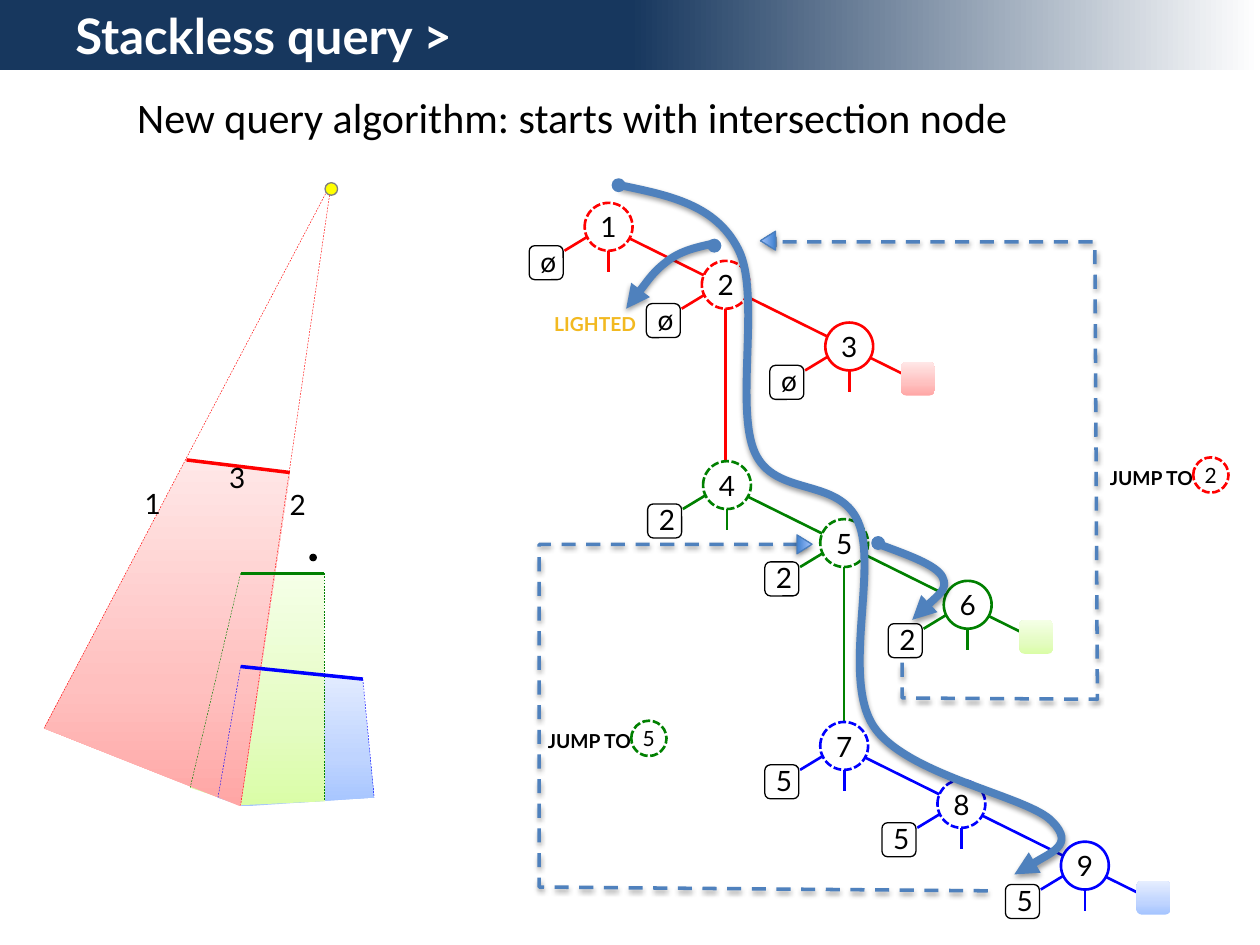
import pptx
import pptx.dml.color
import pptx.enum.dml
import pptx.enum.shapes
import pptx.enum.text
import pptx.oxml.ns
import pptx.util
from lxml import etree
from pptx.util import Inches

qn = pptx.oxml.ns.qn
SHAPE = pptx.enum.shapes.MSO_SHAPE
DASH = pptx.enum.dml.MSO_LINE

THEME = {
    "font": "Lato", "body_font": "Calibri",
    "title": 28, "body": 24, "label": 16, "small": 12, "note": 11,
    "black": "000000", "white": "FFFFFF", "grey": "808080", "yellow": "FFFF00",
    "gold": "F2B921", "red": "FF0000", "green": "008000", "blue": "0000FF",
    "flow": "4F81BD", "arrow_edge": "4B7EBC",
    "red_fade": [(0, "FFA6A5"), (35, "FFC0BF"), (100, "FFE7E7")],
    "green_fade": [(0, "DAFDA7"), (35, "E4FCC2"), (100, "F5FFE7")],
    "blue_fade": [(0, "A4C4FF"), (35, "BFD4FF"), (100, "E6EEFF")],
    "arrow_fade": [(0, "3F80CE"), (100, "A4C4FF")],
    "title_fade": [(50, "17375E"), (100, "FFFFFF")],
}

TITLE = "\tStackless query >"
SUBTITLE = "New query algorithm: starts with intersection node"
VOLUMES = [
    ("blue", [(1.91, 5.28), (1.73, 6.33), (1.93, 6.4), (2.97, 6.33), (2.87, 5.38)]),
    ("green", [(1.91, 4.55), (1.51, 6.25), (1.92, 6.39), (2.58, 6.36), (2.57, 4.55)]),
    ("red", [(0.35, 5.78), (1.48, 3.65), (2.3, 3.76), (1.91, 6.4)]),
]
RAYS = [
    ("green", (2.57, 4.55), (2.57, 6.36)), ("red", (2.63, 1.45), (1.91, 6.39)),
    ("red", (2.63, 1.45), (0.35, 5.78)), ("blue", (1.91, 5.29), (1.73, 6.33)),
    ("blue", (2.88, 5.39), (2.97, 6.33)), ("green", (1.91, 4.55), (1.51, 6.25)),
]
EDGES = [
    ("red", (1.48, 3.65), (2.3, 3.75)), ("blue", (1.91, 5.29), (2.88, 5.39)),
    ("green", (1.91, 4.55), (2.57, 4.55)),
]
EDGE_LABELS = [("1", 1.05, 3.81), ("2", 2.2, 3.82), ("3", 1.72, 3.61)]
SUBTREES = [
    ("red", (4.83, 1.8), "123", "ø", 3.66),
    ("green", (5.77, 3.85), "456", "2", 5.73),
    ("blue", (6.7, 5.92), "789", "5", None),
]
NODE_STEPS = [(0, 0), (0.93, 0.46), (1.91, 0.95)]
CURVES = [
    [(4.92, 1.47), (5.3, 1.55), (5.68, 1.62), (5.86, 1.98), (6.04, 2.33), (5.83, 3.23),
     (5.99, 3.59), (6.15, 3.95), (6.65, 3.78), (6.81, 4.14), (6.97, 4.5), (6.68, 5.37),
     (6.93, 5.76), (7.19, 6.16), (8.17, 6.32), (8.35, 6.52), (8.54, 6.71), (8.05, 6.94),
     (8.05, 6.94)],
    [(6.95, 4.31), (7.19, 4.4), (7.43, 4.48), (7.48, 4.58), (7.53, 4.68), (7.24, 4.92),
     (7.24, 4.92)],
    [(5.67, 1.93), (5.55, 1.96), (5.42, 1.98), (5.3, 2.07), (5.18, 2.16), (4.97, 2.45),
     (4.97, 2.45)],
]
CURVE_STARTS = [(6.97, 4.31), (4.91, 1.47), (5.67, 1.95)]
JUMPS = [("green", "5", 4.25, 5.74), ("red", "2", 8.71, 3.65)]
DETOURS = [
    ([(7.16, 5.26), (7.16, 5.54), (8.71, 5.55), (8.69, 1.92), (6.08, 1.92)], (6.02, 1.85), 270),
    ([(7.84, 7.07), (4.28, 7.04), (4.28, 4.32), (6.42, 4.32)], (6.31, 4.26), 90),
]


def rgb(name):
    return pptx.dml.color.RGBColor.from_string(THEME[name])


def write_text(box, text, *, size="label", color="black", font="font", bold=False,
               align=None, tab=None):
    para = box.text_frame.paragraphs[0]
    if tab:
        stops = etree.SubElement(para._p.get_or_add_pPr(), qn("a:tabLst"))
        etree.SubElement(stops, qn("a:tab"), pos=str(Inches(tab)), algn="l")
    para.alignment = align
    span = para.add_run()
    span.text = text
    span.font.size = pptx.util.Pt(THEME[size])
    span.font.name = THEME[font]
    span.font.bold = bold
    span.font.color.rgb = rgb(color)


def add_text(page, text, left, top, width, height, wrap=False, **style):
    box = page.shapes.add_textbox(*map(Inches, (left, top, width, height)))
    box.text_frame.word_wrap = wrap
    write_text(box, text, **style)


def set_line(item, color, weight, dash=None):
    if color is None:
        item.line.fill.background()
        return
    item.line.color.rgb = rgb(color)
    item.line.width = pptx.util.Pt(weight)
    if dash:
        item.line.dash_style = dash


def paint(shape, fill=None, fade=None, angle=90, line=None, weight=0.75, dash=None, shadow=None):
    shape.shadow.inherit = False
    if fade:
        shape.fill.gradient()
        shape.fill.gradient_angle = angle
        stops = shape._element.spPr.find(".//" + qn("a:gsLst"))
        for stop in list(stops):
            stops.remove(stop)
        for position, color in THEME[fade]:
            stop = etree.SubElement(stops, qn("a:gs"), pos=str(position * 1000))
            etree.SubElement(stop, qn("a:srgbClr"), val=color)
    elif fill:
        shape.fill.solid()
        shape.fill.fore_color.rgb = rgb(fill)
    else:
        shape.fill.background()
    set_line(shape, line, weight, dash)
    if shadow:
        effects = shape._element.spPr.find(qn("a:effectLst"))
        outer = etree.SubElement(effects, qn("a:outerShdw"), blurRad=str(pptx.util.Pt(3.1)),
                                 dist=str(pptx.util.Pt(1.6)), dir="5400000", rotWithShape="0")
        tint = etree.SubElement(outer, qn("a:srgbClr"), val=THEME["black"])
        etree.SubElement(tint, qn("a:alpha"), val=str(shadow * 1000))


def add_shape(page, kind, left, top, width, height, **style):
    shape = page.shapes.add_shape(kind, *map(Inches, (left, top, width, height)))
    paint(shape, **style)
    return shape


def add_line(page, start, end, color, weight=1.5, dash=None):
    line = page.shapes.add_connector(pptx.enum.shapes.MSO_CONNECTOR.STRAIGHT,
                                     *map(Inches, (*start, *end)))
    set_line(line, color, weight, dash)
    etree.SubElement(line._element.spPr, qn("a:effectLst"))


def add_outline(page, points, close=False, curved=False, arrow=False, **style):
    corners = [tuple(map(Inches, point)) for point in points]
    builder = page.shapes.build_freeform(*corners[0], scale=1.0)
    builder.add_line_segments(corners[1:], close=close)
    shape = builder.convert_to_shape()
    paint(shape, **style)
    if curved:
        outline = shape._element.spPr.find(".//" + qn("a:path"))
        segments = outline.findall(qn("a:lnTo"))
        for index in range(0, len(segments), 3):
            bend = etree.SubElement(outline, qn("a:cubicBezTo"))
            for segment in segments[index:index + 3]:
                bend.append(segment[0])
                outline.remove(segment)
    if arrow:
        etree.SubElement(shape._element.spPr.find(qn("a:ln")), qn("a:tailEnd"), type="triangle")


def add_node(page, text, center, diameter, color, dash=DASH.SQUARE_DOT, size="label"):
    x, y = center
    node = add_shape(page, SHAPE.OVAL, x - diameter / 2, y - diameter / 2, diameter, diameter,
                     fill="white", line=color, weight=1.5, dash=dash)
    frame = node.text_frame
    frame.margin_left = frame.margin_right = frame.margin_top = frame.margin_bottom = 0
    frame.vertical_anchor = pptx.enum.text.MSO_ANCHOR.MIDDLE
    write_text(node, text, size=size, align=pptx.enum.text.PP_ALIGN.CENTER)


def add_subtree(page, color, origin, names, link, stem_end):
    left, top = origin
    add_line(page, (left, top + 0.01), (left + 2.34, top + 1.17), color)
    for index, (name, (dx, dy)) in enumerate(zip(names, NODE_STEPS)):
        x, y = left + dx, top + dy
        bottom = stem_end if index == 1 and stem_end else y + 0.36
        add_line(page, (x, y + 0.08), (x, bottom), color)
        add_line(page, (x - 0.02, y - 0.01), (x - 0.35, y + 0.19), color)
        add_node(page, name, (x, y), 0.38, color, None if index == 2 else DASH.SQUARE_DOT)
        add_shape(page, SHAPE.ROUNDED_RECTANGLE, x - 0.63, y + 0.15, 0.27, 0.27, line="black")
        add_text(page, link, x - 0.64, y + 0.09, 0.32, 0.37)
    add_shape(page, SHAPE.ROUNDED_RECTANGLE, left + 2.32, top + 1.07, 0.27, 0.27,
              fade=color + "_fade")


def main():
    deck = pptx.Presentation()
    deck.slide_width, deck.slide_height = Inches(10), Inches(7.5)
    page = deck.slides.add_slide(deck.slide_layouts[6])

    for color, points in VOLUMES:
        add_outline(page, points, close=True, fade=color + "_fade")
    for color, start, end in RAYS:
        add_line(page, start, end, color, 0.25, DASH.DASH)
    for color, start, end in EDGES:
        add_line(page, start, end, color, 2)
    add_shape(page, SHAPE.OVAL, 2.46, 4.4, 0.05, 0.05, fill="black", line="black")
    add_shape(page, SHAPE.OVAL, 2.58, 1.45, 0.1, 0.1, fill="yellow", line="grey")
    for text, left, top in EDGE_LABELS:
        add_text(page, text, left, top, 0.32, 0.67)

    for subtree in SUBTREES:
        add_subtree(page, *subtree)
    add_text(page, "LIGHTED", 4.3, 2.43, 0.89, 0.29, wrap=True, size="note", color="gold", bold=True)

    for points in CURVES:
        add_outline(page, points, curved=True, arrow=True, line="flow", weight=4.5, shadow=38)
    for x, y in CURVE_STARTS:
        add_shape(page, SHAPE.OVAL, x - 0.05, y - 0.05, 0.1, 0.1, fill="flow", line="flow")
    for color, name, left, top in JUMPS:
        add_text(page, "JUMP TO", left, top, 1.05, 0.29, wrap=True, size="note", bold=True)
        add_node(page, name, (left + 0.9, top + 0.12), 0.28, color, size="small")
    for points, tip, rotation in DETOURS:
        add_outline(page, points, arrow=True, line="flow", weight=2, dash=DASH.DASH, shadow=38)
        arrow = add_shape(page, SHAPE.ISOSCELES_TRIANGLE, *tip, 0.15, 0.12, fade="arrow_fade",
                          line="arrow_edge", shadow=35)
        arrow.rotation = rotation

    banner = add_shape(page, SHAPE.RECTANGLE, 0, -0.01, 10, 0.57, fade="title_fade", angle=0)
    banner.text_frame.vertical_anchor = pptx.enum.text.MSO_ANCHOR.MIDDLE
    write_text(banner, TITLE, size="title", color="white", bold=True, tab=0.5,
               align=pptx.enum.text.PP_ALIGN.LEFT)
    add_text(page, SUBTITLE, 0.99, 0.68, 7.31, 0.5, size="body", font="body_font")
    deck.save("out.pptx")


if __name__ == "__main__":
    main()
